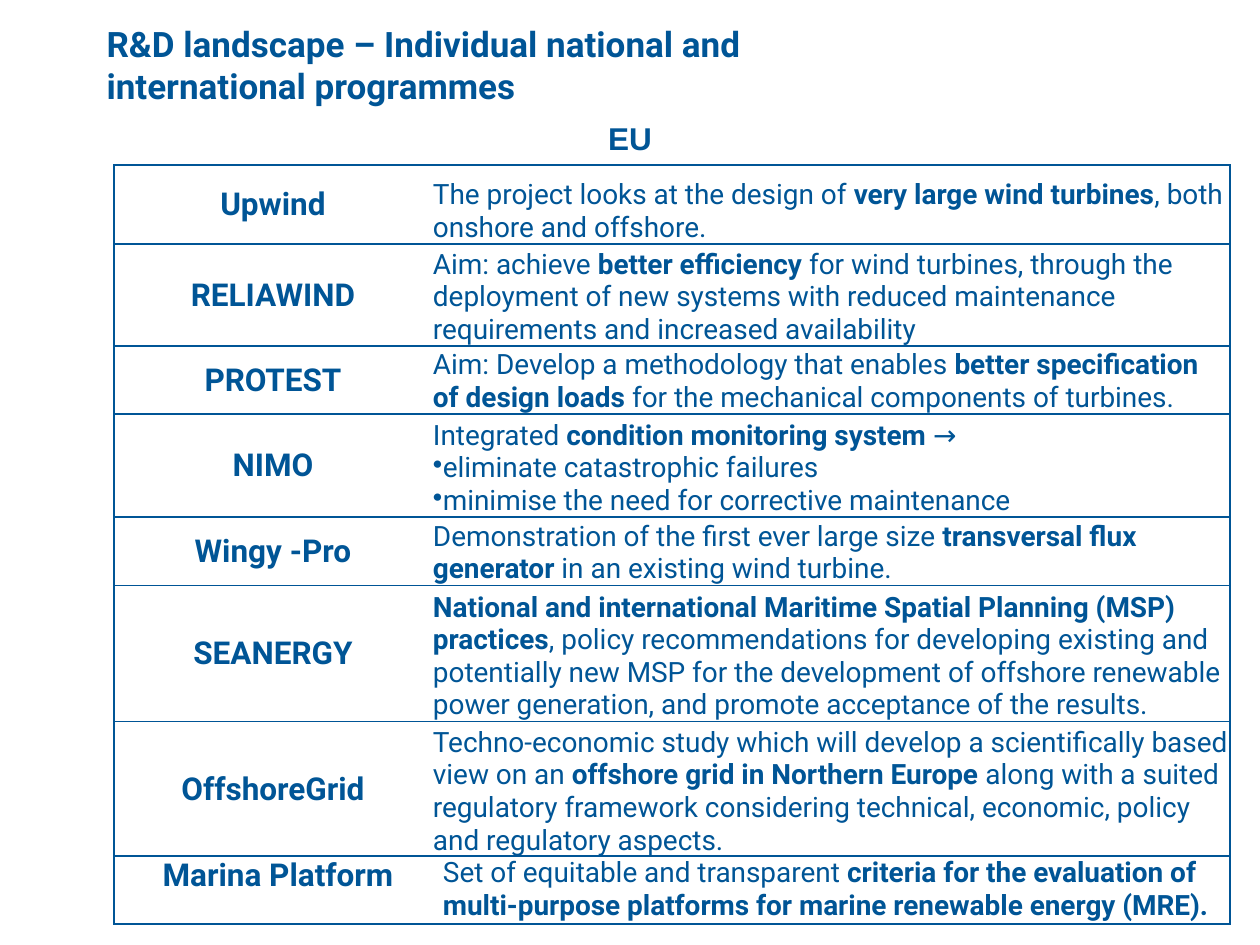
from dataclasses import dataclass

from lxml.etree import SubElement
from pptx import Presentation
from pptx.dml.color import RGBColor
from pptx.enum.text import MSO_ANCHOR, MSO_AUTO_SIZE, PP_ALIGN
from pptx.oxml.ns import qn
from pptx.slide import Slide
from pptx.util import Emu, Pt

COLORS = {"blue": "005596", "white": "FFFFFF"}
BULLET = "• "

PROGRAMMES = [
    ("Upwind", 79, ["The project looks at the design of **very large wind turbines**, both onshore and offshore."]),
    ("RELIAWIND", 102, ["Aim: achieve **better efficiency** for wind turbines, through the deployment of new systems "
                        "with reduced maintenance requirements and increased availability"]),
    ("PROTEST", 68, ["Aim: Develop a methodology that enables **better specification of design loads** "
                     "for the mechanical components of turbines."]),
    ("NIMO", 103, ["Integrated **condition monitoring system **→",
                   BULLET + "eliminate catastrophic failures",
                   BULLET + "minimise the need for corrective maintenance"]),
    ("Wingy -Pro", 68, ["Demonstration of the first ever large size **transversal flux generator **"
                        "in an existing wind turbine."]),
    ("SEANERGY", 136, ["**National and international Maritime Spatial Planning (MSP) practices**, policy recommendations "
                       "for developing existing and potentially new MSP for the development of offshore renewable "
                       "power generation, and promote acceptance of the results."]),
    ("OffshoreGrid", 135, ["Techno-economic study which will develop a scientifically based view on an "
                           "**offshore grid in Northern Europe **along with a suited regulatory framework "
                           "considering technical, economic, policy and regulatory aspects."]),
]
MARINA = [
    ("Marina Platform", 68, ["Set of equitable and transparent **criteria for the evaluation of multi-purpose "
                             "platforms for marine renewable energy (MRE).**"]),
]


def px(length):
    return Emu(round(length * 914400 / 126))


@dataclass
class SlideBuilder:
    slide: Slide
    font: str = "Roboto"
    color: str = COLORS["blue"]

    def format_run(self, run, size, bold, font=None):
        run.font.name = font or self.font
        run.font.size = Pt(size)
        run.font.bold = bold
        run.font.color.rgb = RGBColor.from_string(self.color)

    def place(self, shape, left, top, width, height):
        shape.left, shape.top = px(left), px(top)
        shape.width, shape.height = px(width), px(height)

    def title(self, text, box, size):
        shape = self.slide.shapes.title
        self.place(shape, *box)
        frame = shape.text_frame
        frame.text = text
        frame.word_wrap = True
        frame.auto_size = MSO_AUTO_SIZE.NONE
        frame.vertical_anchor = MSO_ANCHOR.TOP
        frame.paragraphs[0].alignment = PP_ALIGN.LEFT
        self.format_run(frame.paragraphs[0].runs[0], size, True)

    def label(self, text, box, size, font):
        frame = self.slide.shapes.add_textbox(*map(px, box)).text_frame
        frame.word_wrap = True
        frame.text = text
        frame.paragraphs[0].alignment = PP_ALIGN.CENTER
        self.format_run(frame.paragraphs[0].runs[0], size, True, font)

    def border(self, cell, visible_sides):
        properties = cell._tc.get_or_add_tcPr()
        for side in "LRTB":
            line = SubElement(properties, qn(f"a:ln{side}"), w=str(Pt(1)))
            if side in visible_sides:
                fill = SubElement(line, qn("a:solidFill"))
                SubElement(fill, qn("a:srgbClr"), val=self.color)
            else:
                SubElement(line, qn("a:noFill"))

    def style_cell(self, cell, sides, anchor):
        self.border(cell, sides)
        cell.fill.solid()
        cell.fill.fore_color.rgb = RGBColor.from_string(COLORS["white"])
        cell.margin_left = cell.margin_right = cell.margin_top = px(1)
        cell.margin_bottom = 0
        cell.vertical_anchor = anchor

    def rich_paragraph(self, paragraph, text, size):
        if text.startswith(BULLET):
            text = text.removeprefix(BULLET)
            properties = paragraph._p.get_or_add_pPr()
            properties.set("marL", "0")
            properties.set("indent", "0")
            SubElement(properties, qn("a:buChar"), char=BULLET.strip())
        for index, part in enumerate(text.split("**")):
            if part:
                run = paragraph.add_run()
                run.text = part
                self.format_run(run, size, index % 2 == 1)

    def table(self, rows, left, top, widths, anchors):
        heights = [height for _, height, _ in rows]
        frame = self.slide.shapes.add_table(
            len(rows), len(widths), px(left), px(top), px(sum(widths)), px(sum(heights)))
        table = frame.table
        table.first_row = table.horz_banding = False
        for column, width in zip(table.columns, widths):
            column.width = px(width)
        for row, (name, height, lines) in zip(table.rows, rows):
            row.height = px(height)
            name_cell, text_cell = row.cells
            self.style_cell(name_cell, "LTB", anchors[0])
            self.style_cell(text_cell, "RTB", anchors[1])
            name_cell.text_frame.text = name
            heading = name_cell.text_frame.paragraphs[0]
            heading.alignment = PP_ALIGN.CENTER
            self.format_run(heading.runs[0], 18, True)
            for index, line in enumerate(lines):
                text_frame = text_cell.text_frame
                paragraph = text_frame.add_paragraph() if index else text_frame.paragraphs[0]
                self.rich_paragraph(paragraph, line, 16)


def main():
    presentation = Presentation()
    presentation.slide_width, presentation.slide_height = px(1260), px(945)
    slide = presentation.slides.add_slide(presentation.slide_layouts[5])
    builder = SlideBuilder(slide)
    builder.label("EU", (471, 113, 318, 51), 18, "Arial")
    builder.title("R&D landscape – Individual national and international programmes", (94, 16, 753, 97), 20)
    builder.table(PROGRAMMES, 114, 165, (318, 798), (MSO_ANCHOR.MIDDLE, MSO_ANCHOR.BOTTOM))
    builder.table(MARINA, 114, 856, (328, 788), (MSO_ANCHOR.TOP, MSO_ANCHOR.TOP))
    presentation.save("out.pptx")


if __name__ == "__main__":
    main()
